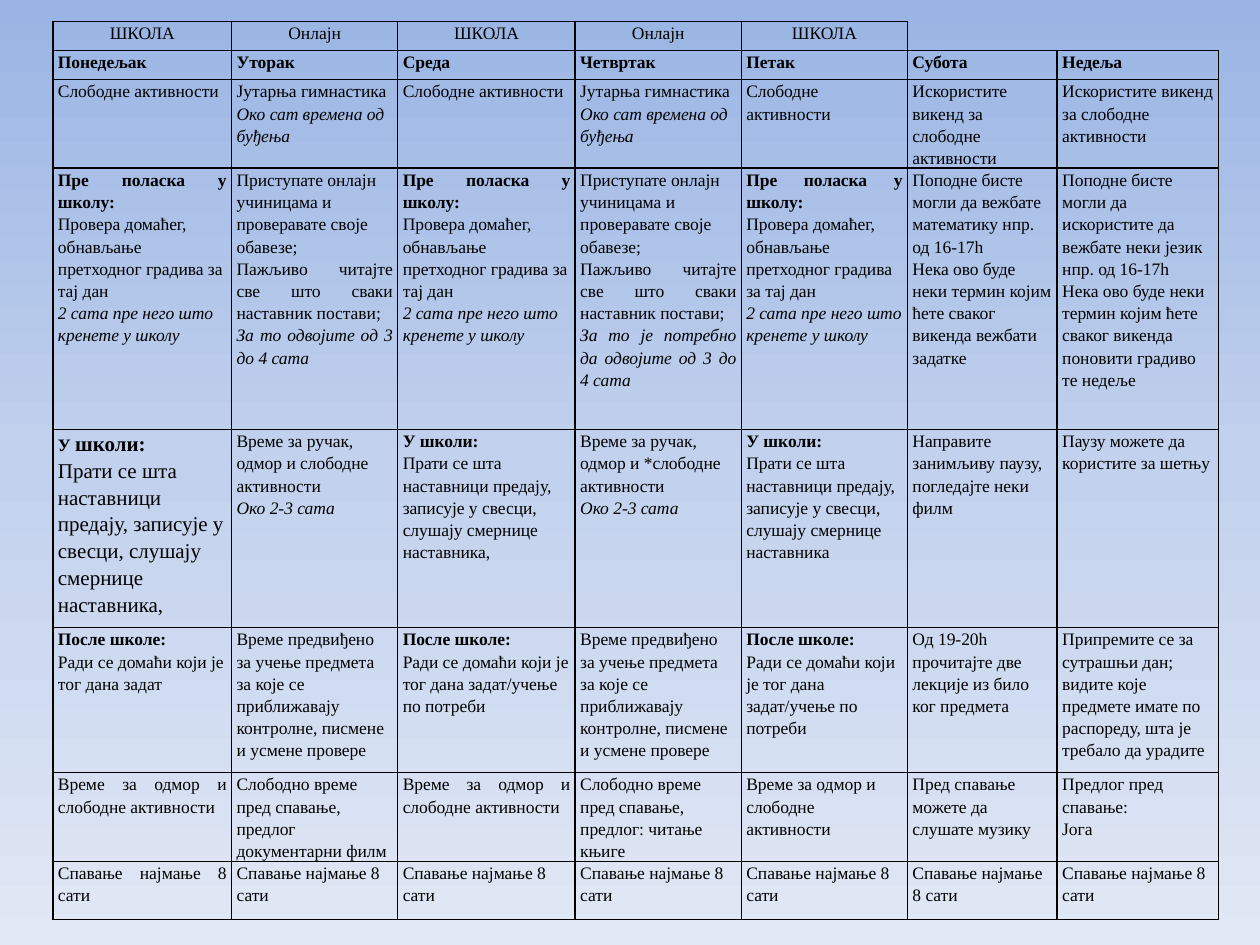
from copy import deepcopy
from dataclasses import dataclass

from lxml import etree
from pptx import Presentation
from pptx import util as u
from pptx.dml.color import RGBColor
from pptx.enum import text
from pptx.oxml import ns


@dataclass(frozen=True)
class Theme:
    font: str = "Times New Roman"
    size: float = 10
    large: float = 12
    ink: str = "000000"
    line: float = 1
    spacing: float = 1.15
    sky: tuple = ((0, "9AB5E4"), (0.5, "C2D1ED"), (1, "E1E8F5"))


THEME = Theme()
LEFT, CENTER, JUSTIFY = (text.PP_ALIGN.LEFT, text.PP_ALIGN.CENTER,
                         text.PP_ALIGN.JUSTIFY)
COLUMNS = (1.42, 1.32, 1.41, 1.32, 1.32, 1.19, 1.28)
ROWS = (0.23, 0.23, 0.69, 2.07, 1.57, 1.15, 0.69, 0.46)


# A paragraph is its alignment and its spans; a span is text and format
def line(words, align=LEFT, **look):
    return align, [(words, look)]


def even(words, **look):
    return line(words, JUSTIFY, **look)


def lead(words):
    return even(words, bold=True)


def note(words, align=LEFT):
    return line(words, align, italic=True)


# Wording shared by several days
FREE = "Слободне активности"
WEEKEND = [line("Искористите викенд за слободне активности")]
EXERCISE = [line("Јутарња гимнастика"), note("Око сат времена од буђења")]
REVIEW = [lead("Пре поласка у школу:"),
          line("Провера домаћег, обнављање претходног градива за тај дан"),
          note("2 сата пре него што кренете у школу")]
LESSONS = "Прати се шта наставници предају, записује у свесци, слушају смернице наставника"
STUDY = [line("Време предвиђено за учење предмета за које се приближавају "
              "контролне, писмене и усмене провере")]
HOMEWORK = [lead("После школе:"),
            line("Ради се домаћи који је тог дана задат/учење по потреби")]
REST = "Време за одмор и слободне активности"
SLEEP = "Спавање најмање 8 сати"
DAYS = ("Понедељак", "Уторак", "Среда", "Четвртак", "Петак", "Субота", "Недеља")


def online(effort):
    return [line("Приступате онлајн учиницама и проверавате своје обавезе;"),
            even("Пажљиво читајте све што сваки наставник постави;"),
            note(effort, JUSTIFY)]


def lunch(words):
    return [line(words), note("Око 2-3 сата")]


def at_school(ending):
    return [lead("У школи:"), line(LESSONS + ending)]


SCHEDULE = [
    [[line(place, CENTER)] for place in ("ШКОЛА", "Онлајн", "ШКОЛА", "Онлајн", "ШКОЛА")],
    [[line(day, bold=True)] for day in DAYS],
    [[line(FREE)], EXERCISE, [line(FREE)], EXERCISE, [line(FREE)], WEEKEND, WEEKEND],
    [REVIEW, online("За то одвојите од 3 до 4 сата"),
     REVIEW, online("За то је потребно да одвојите од 3 до 4 сата"),
     REVIEW,
     [line("Поподне бисте могли да вежбате математику нпр. од 16-17h"),
      line("Нека ово буде неки термин којим ћете сваког викенда вежбати задатке")],
     [line("Поподне бисте могли да искористите да вежбате неки језик нпр. од 16-17h"),
      line("Нека ово буде неки термин којим ћете сваког викенда поновити градиво те недеље")]],
    [[(JUSTIFY, [("У ", {"bold": True}),
                 ("школи:", {"bold": True, "size": THEME.large})]),
      line(LESSONS + ",", size=THEME.large)],
     lunch("Време за ручак, одмор и слободне активности"),
     at_school(","),
     lunch("Време за ручак, одмор и *слободне активности"),
     at_school(""),
     [line("Направите занимљиву паузу, погледајте неки филм")],
     [line("Паузу можете да користите за шетњу")]],
    [[lead("После школе:"), line("Ради се домаћи који је тог дана задат")],
     STUDY, HOMEWORK, STUDY, HOMEWORK,
     [line("Од 19-20h прочитајте две лекције из било ког предмета")],
     [line("Припремите се за сутрашњи дан; видите које предмете имате по "
           "распореду, шта је требало да урадите")]],
    [[even(REST)], [line("Слободно време пред спавање, предлог документарни филм")],
     [even(REST)], [line("Слободно време пред спавање, предлог: читање књиге")],
     [line(REST)], [line("Пред спавање можете да слушате музику")],
     [line("Предлог пред спавање:"), line("Јога")]],
    [[even(SLEEP)]] + [[line(SLEEP)]] * 6,
]


def add_span(para, words, size=THEME.size, bold=False, italic=False):
    span = para.add_run()
    span.text = words
    font = span.font
    font.name, font.size, font.bold, font.italic = THEME.font, u.Pt(size), bold, italic
    font.color.rgb = RGBColor.from_string(THEME.ink)


def set_borders(cell, visible="LRTB"):
    props = cell._tc.get_or_add_tcPr()
    for side in "LRTB":
        border = etree.SubElement(props, ns.qn("a:ln" + side), w=str(u.Pt(THEME.line)))
        if side in visible:
            fill = etree.SubElement(border, ns.qn("a:solidFill"))
            etree.SubElement(fill, ns.qn("a:srgbClr"), val=THEME.ink)
        else:
            etree.SubElement(border, ns.qn("a:noFill"))


def fill_cell(cell, paragraphs, visible="LRTB"):
    set_borders(cell, visible)
    cell.fill.background()
    cell.margin_left = cell.margin_right = u.Inches(0.04)
    cell.margin_top = cell.margin_bottom = 0
    frame = cell.text_frame
    for index, (align, spans) in enumerate(paragraphs):
        para = frame.add_paragraph() if index else frame.paragraphs[0]
        para.alignment, para.line_spacing = align, THEME.spacing
        for words, look in spans:
            add_span(para, words, **look)
    if not paragraphs:  # keeps an empty cell from stretching its row
        etree.SubElement(frame.paragraphs[0]._p, ns.qn("a:endParaRPr"),
                         sz=str(int(THEME.size * 100)))


def paint_background(page):
    fill = page.background.fill
    fill.gradient()
    fill.gradient_angle = 270
    first = fill.gradient_stops[0]._gs
    first.addnext(deepcopy(first))
    for stop, (position, color) in zip(fill.gradient_stops, THEME.sky):
        stop.position = position
        stop.color.rgb = RGBColor.from_string(color)


def add_schedule(page, left, top, width, height):
    table = page.shapes.add_table(len(ROWS), len(COLUMNS), left, top, width, height).table
    table.first_row = table.horz_banding = False
    for column, share in zip(table.columns, COLUMNS):
        column.width = int(width * share / sum(COLUMNS))
    for row, share in zip(table.rows, ROWS):
        row.height = int(height * share / sum(ROWS))
    for row, entries in enumerate(SCHEDULE):
        for column, paragraphs in enumerate(entries):
            fill_cell(table.cell(row, column), paragraphs)
    # Open corner above the weekend
    corner = table.cell(0, 5), table.cell(0, 6)
    fill_cell(corner[0], [], "LB")
    fill_cell(corner[1], [], "B")
    corner[0].merge(corner[1])


def main():
    deck = Presentation()
    deck.slide_width, deck.slide_height = u.Inches(10), u.Inches(7.5)
    page = deck.slides.add_slide(deck.slide_layouts[6])
    paint_background(page)
    add_schedule(page, u.Inches(0.42), u.Inches(0.17), u.Inches(9.25), u.Inches(7.1))
    deck.save("out.pptx")


if __name__ == "__main__":
    main()
